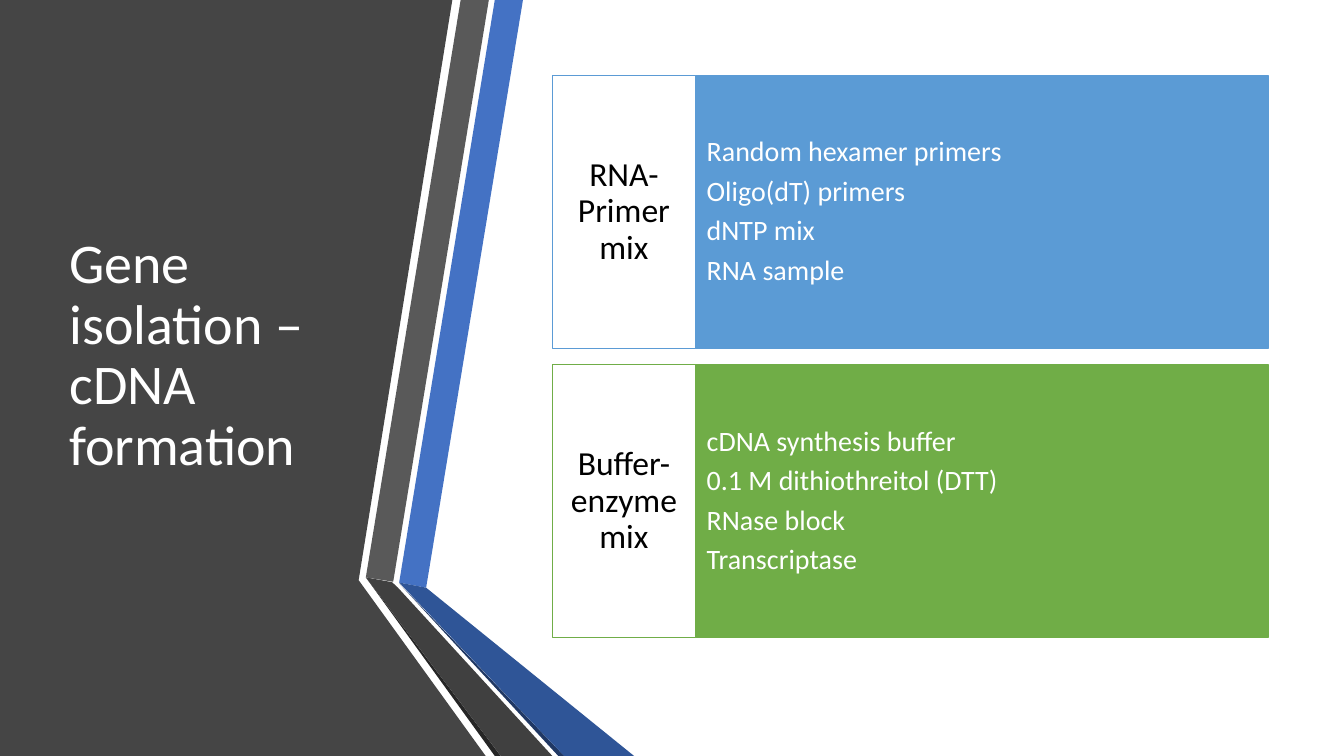
from pptx import Presentation
from pptx import util as u
from pptx.dml.color import RGBColor
from pptx.enum import shapes, text

WIDTH, HEIGHT = 33.87, 19.05

# Fill and corner points in cm, from back to front
RIBBONS = [
    ("454545", [(0, 0), (11.4, 0), (9.04, 14.62), (12.24, HEIGHT), (0, HEIGHT)]),
    ("4472C4", [(10.06, 14.68), (10.74, 14.81), (13.18, 0), (12.47, 0)]),
    ("595959", [(12.32, 0), (11.61, 0), (9.22, 14.55), (9.91, 14.66)]),
    ("262626", [(9.22, 14.55), (12.47, HEIGHT), (12.62, HEIGHT)]),
    ("203864", [(10.06, 14.7), (14.07, HEIGHT), (14.22, HEIGHT)]),
    ("2F5597", [(10.06, 14.68), (14.22, HEIGHT), (15.98, HEIGHT), (10.74, 14.81)]),
    ("404040", [(13.92, HEIGHT), (10.03, 14.81), (9.88, 14.67), (9.22, 14.55),
                (12.62, HEIGHT)]),
]

MIXES = [
    ("RNA-Primer mix", "5B9BD5",
     ["Random hexamer primers", "Oligo(dT) primers", "dNTP mix", "RNA sample"]),
    ("Buffer-enzyme mix", "70AD47",
     ["cDNA synthesis buffer", "0.1 M dithiothreitol (DTT)", "RNase block",
      "Transcriptase"]),
]
MIX_LEFT, MIX_TOP, MIX_HEIGHT, MIX_PITCH = 13.92, 1.9, 6.88, 7.29
LABEL_WIDTH, LIST_WIDTH = 3.61, 14.43


def color(hex_string):
    return RGBColor.from_string(hex_string)


def write_text(shape, lines, size, ink="FFFFFF", font="Calibri", centered=False,
               margins=(0.25, 0.13), space_after=0):
    """Fill a shape with one paragraph per line; margins are (side, top) in cm."""
    frame = shape.text_frame
    frame.word_wrap = True
    frame.vertical_anchor = text.MSO_ANCHOR.MIDDLE
    frame.margin_left = frame.margin_right = u.Cm(margins[0])
    frame.margin_top = frame.margin_bottom = u.Cm(margins[1])
    for index, line in enumerate(lines):
        paragraph = frame.add_paragraph() if index else frame.paragraphs[0]
        paragraph.alignment = text.PP_ALIGN.CENTER if centered else text.PP_ALIGN.LEFT
        paragraph.line_spacing = 0.9
        paragraph.space_after = u.Pt(space_after)
        run = paragraph.add_run()
        run.text = line
        run.font.name = font
        run.font.size = u.Pt(size)
        run.font.color.rgb = color(ink)


class SlideBuilder:
    font = "Calibri"
    line_width = 1

    def __init__(self, slide):
        self.slide = slide

    def ribbon(self, fill, points):
        corners = [(u.Cm(x), u.Cm(y)) for x, y in points]
        builder = self.slide.shapes.build_freeform(*corners[0])
        builder.add_line_segments(corners[1:], close=True)
        shape = builder.convert_to_shape()
        shape.shadow.inherit = False
        shape.fill.solid()
        shape.fill.fore_color.rgb = color(fill)
        shape.line.fill.background()

    def title(self, wording, left, top, width, height):
        box = self.slide.shapes.add_textbox(*map(u.Cm, (left, top, width, height)))
        write_text(box, [wording], 40, font=self.font)

    def box(self, left, top, width, height, fill, outline, lines, size, **style):
        shape = self.slide.shapes.add_shape(
            shapes.MSO_SHAPE.RECTANGLE, *map(u.Cm, (left, top, width, height)))
        shape.shadow.inherit = False
        shape.fill.solid()
        shape.fill.fore_color.rgb = color(fill)
        shape.line.color.rgb = color(outline)
        shape.line.width = u.Pt(self.line_width)
        write_text(shape, lines, size, font=self.font, **style)

    def mix(self, top, name, accent, ingredients):
        """Draw a coloured ingredient list with its white label on the left."""
        self.box(MIX_LEFT + LABEL_WIDTH, top, LIST_WIDTH, MIX_HEIGHT, accent, accent,
                 ingredients, 20, margins=(0.28, 1.75), space_after=6.6)
        self.box(MIX_LEFT, top, LABEL_WIDTH, MIX_HEIGHT, "FFFFFF", accent,
                 [name], 24, ink="000000", centered=True, margins=(0.2, 0.69),
                 space_after=8)


def main():
    presentation = Presentation()
    presentation.slide_width = u.Cm(WIDTH)
    presentation.slide_height = u.Cm(HEIGHT)
    builder = SlideBuilder(presentation.slides.add_slide(presentation.slide_layouts[6]))
    for fill, points in RIBBONS:
        builder.ribbon(fill, points)
    builder.title("Gene isolation – cDNA formation", 1.5, 1.9, 7.72, 14.17)
    for row, (name, accent, ingredients) in enumerate(MIXES):
        builder.mix(MIX_TOP + row * MIX_PITCH, name, accent, ingredients)
    presentation.save("out.pptx")


if __name__ == "__main__":
    main()
